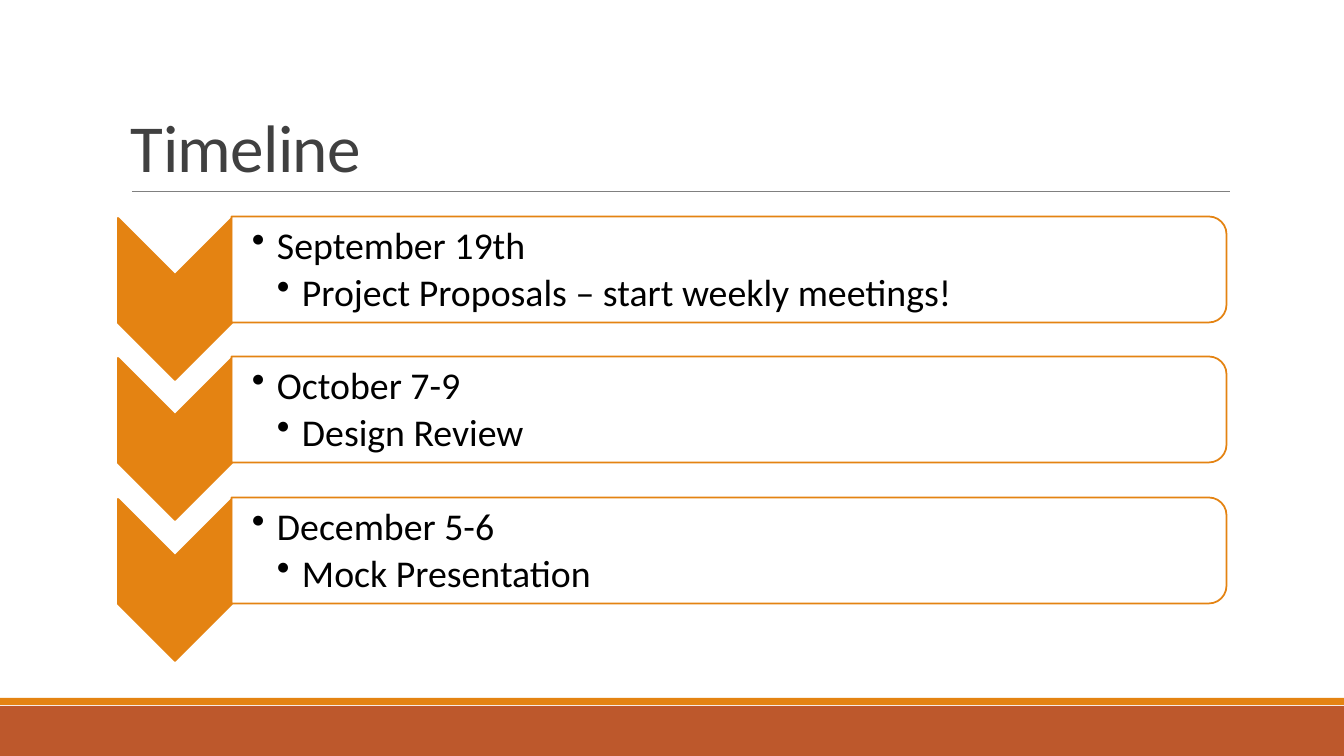
from lxml import etree
from pptx import Presentation
from pptx import util as u
from pptx.dml.color import RGBColor
from pptx.enum import shapes, text
from pptx.oxml import ns

HUES = {"rust": "BD582C", "orange": "E48312", "white": "FFFFFF",
        "rule": "808080", "title": "404040", "body": "000000"}
STEPS = [("September 19th", "Project Proposals – start weekly meetings!"),
         ("October 7-9", "Design Review"),
         ("December 5-6", "Mock Presentation")]
KINDS = shapes.MSO_SHAPE
SCALE = 12192000 / 1344


def px(n):
    return u.Emu(round(n * SCALE))


def hue(name):
    return RGBColor.from_string(HUES[name])


def add(node, tag, **attrs):
    return etree.SubElement(node, ns.qn(tag), **attrs)


class Deck:
    """Holds the text style and the current slide, and draws each element."""

    def __init__(self, font):
        self.font = font
        self.prs = Presentation()
        self.prs.slide_width, self.prs.slide_height = px(1344), px(756)
        self.slide = self.prs.slides.add_slide(self.prs.slide_layouts[6])

    def shape(self, kind, box, fill, line=None, turn=0, alpha=None):
        item = self.slide.shapes.add_shape(kind, *map(px, box))
        item.shadow.inherit = False
        item.rotation = turn
        item.fill.solid()
        item.fill.fore_color.rgb = hue(fill)
        if alpha:
            tint = item._element.spPr.find(ns.qn("a:solidFill"))[0]
            add(tint, "a:alpha", val=str(alpha * 1000))
        if line:
            item.line.color.rgb = hue(line)
            item.line.width = u.Pt(1.25)
        else:
            item.line.fill.background()

    def rule(self, left, right, y, color):
        line = self.slide.shapes.add_connector(
            shapes.MSO_CONNECTOR.STRAIGHT, px(left), px(y), px(right), px(y))
        line.line.color.rgb = hue(color)
        line.line.width = u.Pt(0.5)
        add(line._element.spPr, "a:effectLst")

    def frame(self, box, anchor, insets):
        body = self.slide.shapes.add_textbox(*map(px, box)).text_frame
        body.word_wrap = True
        body.vertical_anchor = anchor
        (body.margin_left, body.margin_top,
         body.margin_right, body.margin_bottom) = map(px, insets)
        return body

    def run(self, para, words, size, color):
        run = para.add_run()
        run.text = words
        run.font.name, run.font.size = self.font, u.Pt(size)
        run.font.color.rgb = hue(color)
        return run

    def title(self, box, words):
        para = self.frame(box, text.MSO_ANCHOR.BOTTOM, (10, 5, 10, 5)).paragraphs[0]
        para.line_spacing = 0.85
        run = self.run(para, words, 48, "title")
        run.font._element.set("spc", "-50")

    def bullets(self, box, lines):
        body = self.frame(box, text.MSO_ANCHOR.MIDDLE, (21, 2, 2, 2))
        for level, words in enumerate(lines):
            para = body.add_paragraph() if level else body.paragraphs[0]
            para.level = level
            para.line_spacing = 0.9
            props = para._p.get_or_add_pPr()
            props.set("marL", str(px(25 * (level + 1))))
            props.set("indent", str(px(-25)))
            add(add(props, "a:spcAft"), "a:spcPct", val="15000")
            add(props, "a:buChar", char="•")
            self.run(para, words, 27, "body")


def main():
    deck = Deck("Calibri")
    deck.shape(KINDS.RECTANGLE, (0, 706, 1344, 50), "rust")
    deck.shape(KINDS.RECTANGLE, (0, 698, 1344, 7), "orange")
    deck.rule(132, 1230, 191, "rule")
    deck.title((121, 31, 1109, 160), "Timeline")
    for i, lines in enumerate(STEPS):
        drop = 281 * i // 2
        deck.shape(KINDS.CHEVRON, (94, 242 + drop, 162, 114),
                   "orange", "orange", 90)
        deck.shape(KINDS.ROUND_2_SAME_RECTANGLE, (676, drop - 228, 106, 995),
                   "white", "orange", 90, 90)
        deck.bullets((231, 223 + drop, 990, 95), lines)
    deck.prs.save("out.pptx")


if __name__ == "__main__":
    main()
